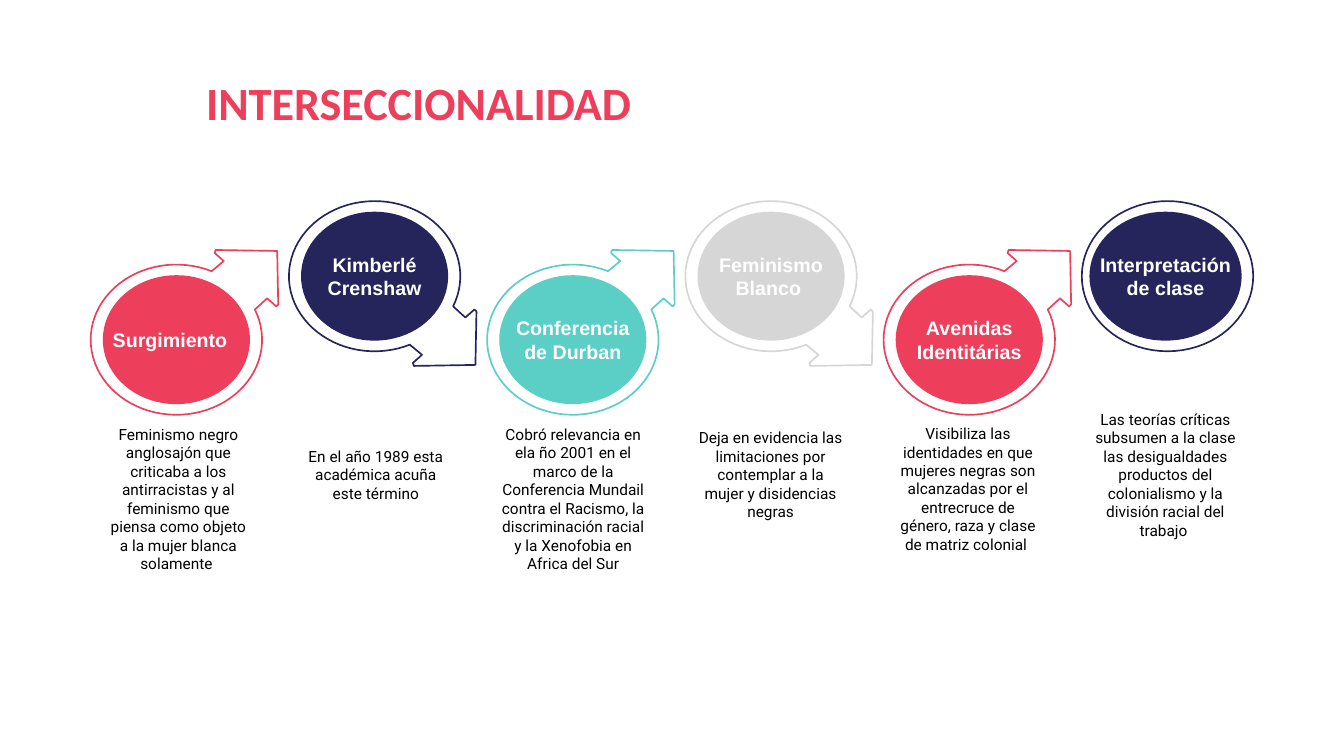
import math
from pptx import Presentation, util as u
from pptx.dml.color import RGBColor
from pptx.enum import text

CORAL = RGBColor(0xED, 0x3F, 0x5C)
NAVY = RGBColor(0x25, 0x25, 0x5B)
TEAL = RGBColor(0x5B, 0xCF, 0xC5)
GREY = RGBColor(0xD6, 0xD6, 0xD6)
WHITE = RGBColor(0xFF, 0xFF, 0xFF)
BLACK = RGBColor(0, 0, 0)

CENTER, LEFT = text.PP_ALIGN.CENTER, text.PP_ALIGN.LEFT
TOP, MIDDLE = text.MSO_ANCHOR.TOP, text.MSO_ANCHOR.MIDDLE

RING_X, RING_Y = 0.85, 0.745
ARROW = [(0.35, -0.68), (0.47, -0.78), (0.38, -0.86), (0.39, -0.89), (1.0, -0.88),
         (1.01, -0.35), (0.99, -0.33), (0.9, -0.41), (0.78, -0.3)]

STEPS = [
    ("Surgimiento", CORAL, 4.57,
     "Feminismo negro anglosajón que criticaba a los antirracistas y al feminismo "
     "que piensa como objeto a la mujer blanca solamente "),
    ("Kimberlé Crenshaw", NAVY, 4.33,
     "En el año 1989 esta académica acuña este término"),
    ("Conferencia de Durban", TEAL, 4.57,
     "Cobró relevancia en ela ño 2001 en el marco de la Conferencia Mundail contra "
     "el Racismo, la discriminación racial y la Xenofobia en Africa del Sur"),
    ("Feminismo Blanco ", GREY, 4.33,
     "Deja en evidencia las limitaciones por contemplar a la mujer y disidencias negras"),
    ("Avenidas Identitárias", CORAL, 4.47,
     "Visibiliza las identidades en que mujeres negras son alcanzadas por el "
     "entrecruce de género, raza y clase de matriz colonial "),
    ("Interpretación de clase", NAVY, 4.33,
     "Las teorías críticas subsumen a la clase las desigualdades productos del "
     "colonialismo y la división racial del trabajo "),
]


def arc(radius_x, radius_y, start=0, end=360, count=72):
    angles = [math.radians(start + (end - start) * i / count) for i in range(count + 1)]
    return [(radius_x * math.cos(a), radius_y * math.sin(a)) for a in angles]


class Board:
    """Hold the text styles and the slide being drawn."""

    styles = {
        "title": {"name": "Calibri", "size": u.Pt(33), "bold": True},
        "label": {"name": "Arial", "size": u.Pt(14), "bold": True},
        "caption": {"name": "Roboto", "size": u.Pt(11), "bold": False},
    }

    def __init__(self, deck):
        self.slide = deck.slides.add_slide(deck.slide_layouts[5])

    def fill_text(self, box, wording, style, color, align=CENTER, anchor=MIDDLE):
        frame = box.text_frame
        settings = {"word_wrap": True, "auto_size": text.MSO_AUTO_SIZE.NONE,
                    "vertical_anchor": anchor}
        for side in ("left", "top", "right", "bottom"):
            settings["margin_" + side] = u.Inches(0.1)
        for key, value in settings.items():
            setattr(frame, key, value)
        para = frame.paragraphs[0]
        para.alignment = align
        span = para.add_run()
        span.text = wording
        for key, value in self.styles[style].items():
            setattr(span.font, key, value)
        span.font.color.rgb = color
        return para

    def title(self, wording, color):
        box = self.slide.shapes.title
        box.left, box.top, box.width, box.height = map(u.Inches, (0.85, 0.7, 6.71, 0.7))
        self.fill_text(box, wording, "title", color, anchor=TOP).line_spacing = 0.9

    def caption(self, left, top, wording):
        box = self.slide.shapes.add_textbox(*map(u.Inches, (left, top, 1.66, 0.76)))
        self.fill_text(box, wording, "caption", BLACK)

    def outline(self, x, y, points):
        corners = [(u.Inches(x + dx), u.Inches(y + dy)) for dx, dy in points]
        builder = self.slide.shapes.build_freeform(*corners[0])
        builder.add_line_segments(corners[1:], close=True)
        shape = builder.convert_to_shape()
        shape.shadow.inherit = False
        return shape

    def ring(self, x, y, color, arrow=None):
        points = arc(RING_X, RING_Y)
        if arrow:
            points = arc(RING_X, RING_Y, -23.7, 294.3) + ARROW
            if arrow == "down":
                points = [(dx, -dy) for dx, dy in points]
        shape = self.outline(x, y, points)
        shape.fill.background()
        shape.line.color.rgb = color
        shape.line.width = u.Pt(1.2)

    def disc(self, x, y, width, color, wording, align):
        shape = self.outline(x, y, arc(width / 2, 0.64))
        shape.fill.solid()
        shape.fill.fore_color.rgb = color
        shape.line.fill.background()
        self.fill_text(shape, wording, "label", WHITE, align)


def main():
    deck = Presentation()
    deck.slide_width, deck.slide_height = u.Inches(13.33), u.Inches(7.5)
    board = Board(deck)
    board.title("INTERSECCIONALIDAD ", CORAL)
    for i, (label, color, caption_top, caption) in enumerate(STEPS):
        last = i == len(STEPS) - 1
        x, y = 1.75 + i * 9.83 / 5, (3.37, 2.74)[i % 2]
        board.ring(x, y, color, None if last else ("up", "down")[i % 2])
        board.disc(x - 0.02 if last else x, y, 1.51 if last else 1.46,
                   color, label, CENTER if i else LEFT)
        board.caption(0.94 + i * 9.79 / 5, caption_top, caption)
    deck.save("out.pptx")


if __name__ == "__main__":
    main()
